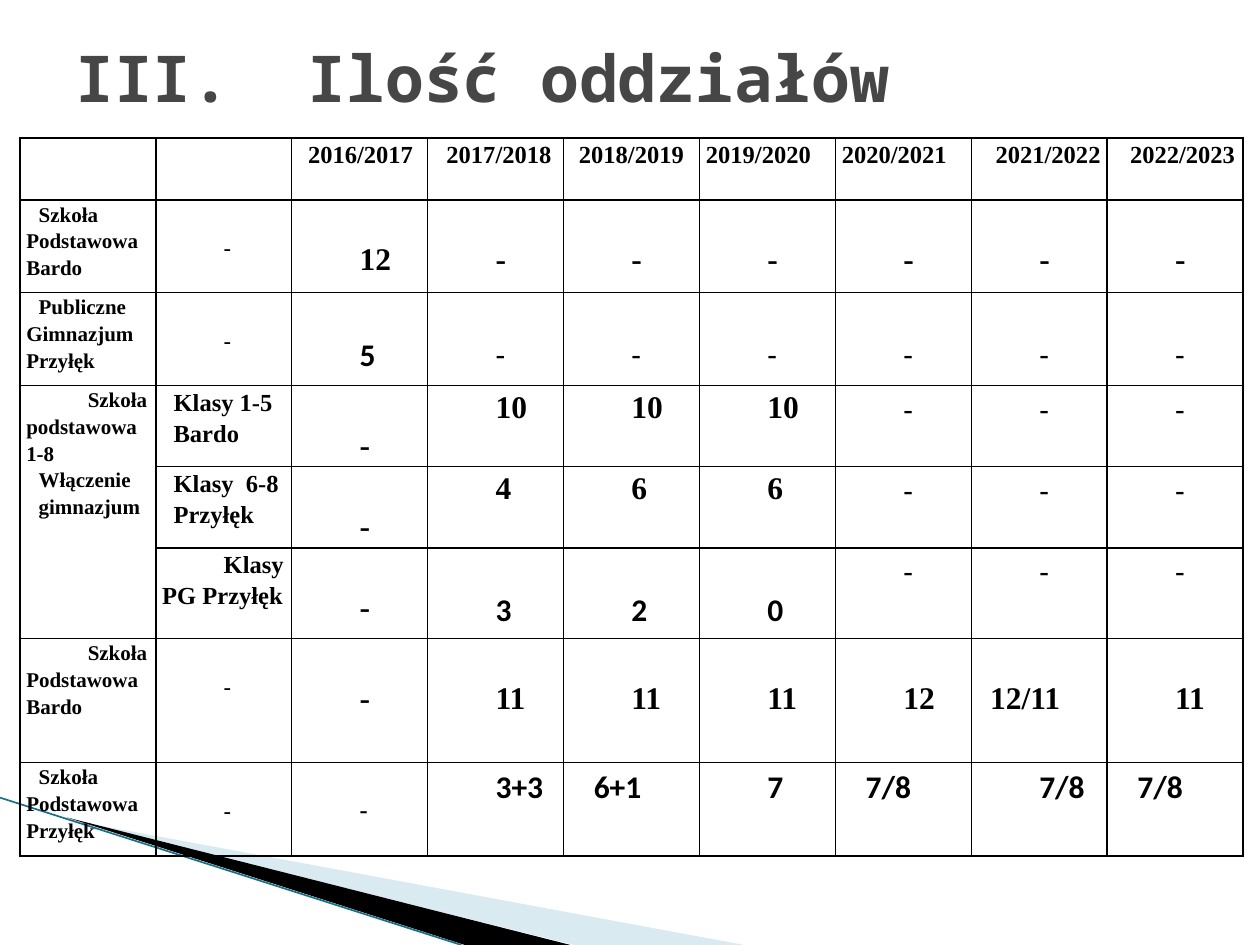
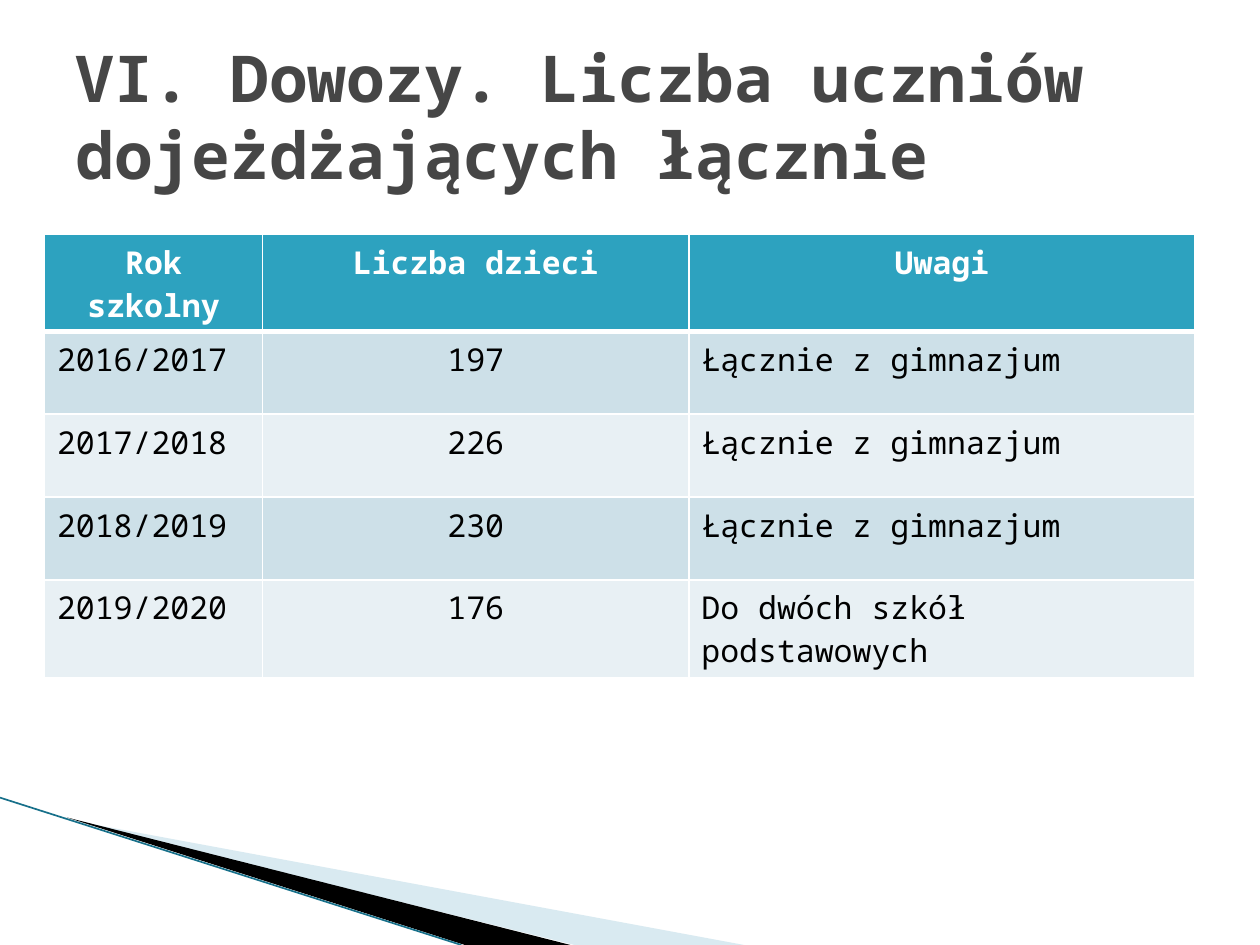
"""Builds two slides about school classes and pupil transport."""
from dataclasses import dataclass
from typing import NamedTuple

import pptx
import pptx.dml.color
import pptx.enum.text
import pptx.oxml
import pptx.oxml.ns
import pptx.slide
import pptx.util
from lxml import etree

Cm = pptx.util.Cm
Pt = pptx.util.Pt
Slide = pptx.slide.Slide
ALIGN = pptx.enum.text.PP_ALIGN
qn = pptx.oxml.ns.qn

HUES = {
    "black": "000000",
    "white": "FFFFFF",
    "title": "464646",
    "pale": "A0CBDC",
    "teal": "17708A",
    "head": "2DA2BF",
    "dark": "CDE0E8",
    "light": "E8F0F4",
}
MONO, SERIF, SANS = "Noto Sans Mono", "Times New Roman", "Calibri"
DEEP = 1.24


class Face(NamedTuple):
    font: str
    size: float
    bold: bool = False
    drop: float = 0
    hue: str = "black"
    align: ALIGN = ALIGN.JUSTIFY
    lead: float = 1.15


class Cell(NamedTuple):
    text: str
    face: Face
    indent: float = DEEP
    fill: str = ""


class Wedge(NamedTuple):
    hue: str
    alpha: int
    points: list[tuple[float, float]]


@dataclass
class Grid:
    left: float
    top: float
    cols: list[float]
    rows: list[float]
    cells: list[list[Cell | None]]
    edge: str
    pad: tuple[float, float]
    rule: float = 1


WEDGES = [
    Wedge("pale", 40, [(1.4, 16.53), (15.0, 19.05), (11.58, 19.05)]),
    Wedge("black", 100, [(1.35, 16.48), (11.5, 19.05), (9.37, 19.05)]),
]

TITLE = Face(MONO, 36.9, True, hue="title", align=ALIGN.LEFT, lead=1)
LABEL = Face(SERIF, 12, True)
YEAR = Face(SERIF, 14, True)
SMALL = Face(SANS, 14, drop=0.6)
BOLD = Face(SERIF, 18, True)
LOW = BOLD._replace(drop=0.76)
PLAIN = Face(SANS, 18)
THICK = Face(SANS, 18, True)
HEAD = Face(MONO, 18, True, hue="white", align=ALIGN.CENTER, lead=1)
MID = HEAD._replace(bold=False, hue="black")
SIDE = MID._replace(align=ALIGN.LEFT)


def line(face: Face, *texts: str) -> list[Cell]:
    """Give one deeply indented cell per text."""
    return [Cell(text, face) for text in texts]


def years() -> list[Cell]:
    """Give the school year headings."""
    gaps = [0.2, 0.25, 0.18, 0, 0, 0.36, 0.33]
    return [Cell(f"{2016 + i}/{2017 + i}", YEAR, gap) for i, gap in enumerate(gaps)]


def units() -> Grid:
    """Describe the table of class counts."""
    dash = Cell("-", SMALL)
    low = Cell("-", LOW)
    last = line(PLAIN, *"---")
    sunk = THICK._replace(drop=0.76)
    cells = [
        [None, None, *years()],
        [Cell("Szkoła Podstawowa Bardo", LABEL, 0.25), dash, *line(LOW, "12", *"------")],
        [Cell("Publiczne Gimnazjum Przyłęk", LABEL, 0.25), dash,
         Cell("5", sunk), *line(PLAIN._replace(drop=0.76), *"------")],
        [Cell("Szkoła podstawowa 1-8\nWłączenie\ngimnazjum", LABEL),
         Cell("Klasy 1-5\nBardo", YEAR, 0.23), low, *line(BOLD, "10", "10", "10"), *last],
        [None, Cell("Klasy  6-8\nPrzyłęk", YEAR, 0.23), low, *line(BOLD, *"466"), *last],
        [None, Cell("Klasy PG Przyłęk", YEAR), low, *line(sunk, *"320"), *last],
        [Cell("Szkoła Podstawowa Bardo", LABEL), dash, low,
         *line(LOW, "11", "11", "11", "12"), Cell("12/11", LOW, 0.25), Cell("11", LOW)],
        [Cell("Szkoła Podstawowa Przyłęk", LABEL, 0.25), dash,
         Cell("-", YEAR._replace(drop=0.6)), Cell("3+3", THICK), Cell("6+1", THICK, 0.48),
         Cell("7", THICK), Cell("7/8", THICK, 0.48), Cell("7/8", THICK), Cell("7/8", THICK, 0.48)],
    ]
    rows = [1.25, 1.87, 1.87, 1.59, 1.58, 1.83, 2.5, 1.88]
    return Grid(0.4, 2.78, [2.74] * 9, rows, cells, "black", (0.13, 0))


def rides() -> Grid:
    """Describe the table of transported pupils."""
    data = [
        ("2016/2017", "197", "Łącznie z gimnazjum"),
        ("2017/2018", "226", "Łącznie z gimnazjum"),
        ("2018/2019", "230", "Łącznie z gimnazjum"),
        ("2019/2020", "176", "Do dwóch szkół podstawowych"),
    ]
    heads = ("Rok szkolny", "Liczba dzieci", "Uwagi")
    cells = [[Cell(text, HEAD, 0, "head") for text in heads]]
    for i, items in enumerate(data):
        fill = "light" if i % 2 else "dark"
        cells.append([Cell(text, face, 0, fill) for text, face in zip(items, (SIDE, MID, SIDE))])
    rows = [1.95, 1.67, 1.67, 1.67, 1.97]
    return Grid(0.9, 4.73, [4.39, 8.6, 10.2], rows, cells, "white", (0.25, 0.13), 3)


def tone(name: str) -> pptx.dml.color.RGBColor:
    """Look up a colour."""
    return pptx.dml.color.RGBColor.from_string(HUES[name])


def write(frame, text: str, face: Face, indent: float = 0) -> None:
    """Fill a text frame, with one paragraph per line."""
    frame.word_wrap = True
    for i, part in enumerate(text.split("\n")):
        para = frame.add_paragraph() if i else frame.paragraphs[0]
        para.text = part
        para.alignment = face.align
        para.line_spacing = face.lead
        if indent:
            gap = indent if i == 0 or indent != DEEP else 0.25
            para._p.get_or_add_pPr().set("indent", str(Cm(gap)))
        para.font.name = face.font
        para.font.size = Pt(face.size)
        para.font.bold = face.bold
        para.font.color.rgb = tone(face.hue)


def border(cell, hue: str, top: float, base: float) -> None:
    """Draw the four edges of a table cell."""
    props = cell._tc.get_or_add_tcPr()
    for side, width in (("L", 1), ("R", 1), ("T", top), ("B", base)):
        edge = etree.SubElement(props, qn(f"a:ln{side}"), w=str(Pt(width)))
        fill = etree.SubElement(edge, qn("a:solidFill"))
        etree.SubElement(fill, qn("a:srgbClr"), val=HUES[hue])


def draw(slide: Slide, grid: Grid) -> pptx.table.Table:
    """Add a table to a slide."""
    frame = slide.shapes.add_table(
        len(grid.rows), len(grid.cols), Cm(grid.left), Cm(grid.top),
        Cm(sum(grid.cols)), Cm(sum(grid.rows)))
    table = frame.table
    table.first_row = table.horz_banding = False
    for col, width in zip(table.columns, grid.cols):
        col.width = Cm(width)
    for row, height in zip(table.rows, grid.rows):
        row.height = Cm(height)
    for y, items in enumerate(grid.cells):
        for x, item in enumerate(items):
            cell = table.cell(y, x)
            border(cell, grid.edge, grid.rule if y == 1 else 1, grid.rule if y == 0 else 1)
            cell.margin_left = cell.margin_right = Cm(grid.pad[0])
            cell.margin_top = cell.margin_bottom = Cm(grid.pad[1])
            if item and item.fill:
                cell.fill.solid()
                cell.fill.fore_color.rgb = tone(item.fill)
            else:
                cell.fill.background()
            if item:
                cell.margin_top = Cm(grid.pad[1] + item.face.drop)
                write(cell.text_frame, item.text, item.face, item.indent)
    return table


def base(deck, title: str) -> Slide:
    """Add a slide with the corner wedges and a title."""
    slide = deck.slides.add_slide(deck.slide_layouts[6])
    for wedge in WEDGES:
        points = [(Cm(x), Cm(y)) for x, y in wedge.points]
        pen = slide.shapes.build_freeform(*points[0])
        pen.add_line_segments(points[1:])
        shape = pen.convert_to_shape()
        shape.shadow.inherit = False
        shape.line.fill.background()
        shape.fill.solid()
        shape.fill.fore_color.rgb = tone(wedge.hue)
        if wedge.alpha < 100:
            clr = shape._element.spPr.find(".//" + qn("a:srgbClr"))
            etree.SubElement(clr, qn("a:alpha"), val=str(wedge.alpha * 1000))
    edge = slide.shapes.add_connector(1, Cm(0), Cm(16.08), Cm(9.3), Cm(19.05))
    edge.line.color.rgb = tone("teal")
    edge.line.width = Pt(0.95)
    etree.SubElement(edge._element.spPr, qn("a:effectLst"))
    box = slide.shapes.add_textbox(Cm(1.27), Cm(0.76), Cm(22.86), Cm(3.18))
    box.text_frame.margin_top = box.text_frame.margin_bottom = 0
    write(box.text_frame, title, TITLE)
    return slide


def main() -> None:
    """Build and save the deck."""
    deck = pptx.Presentation()
    deck.slide_width, deck.slide_height = Cm(25.4), Cm(19.05)
    table = draw(base(deck, "III.  Ilość oddziałów"), units())
    table.cell(3, 0).merge(table.cell(5, 0))
    draw(base(deck, "VI. Dowozy. Liczba uczniów dojeżdżających łącznie"), rides())
    deck.save("out.pptx")


if __name__ == "__main__":
    main()
